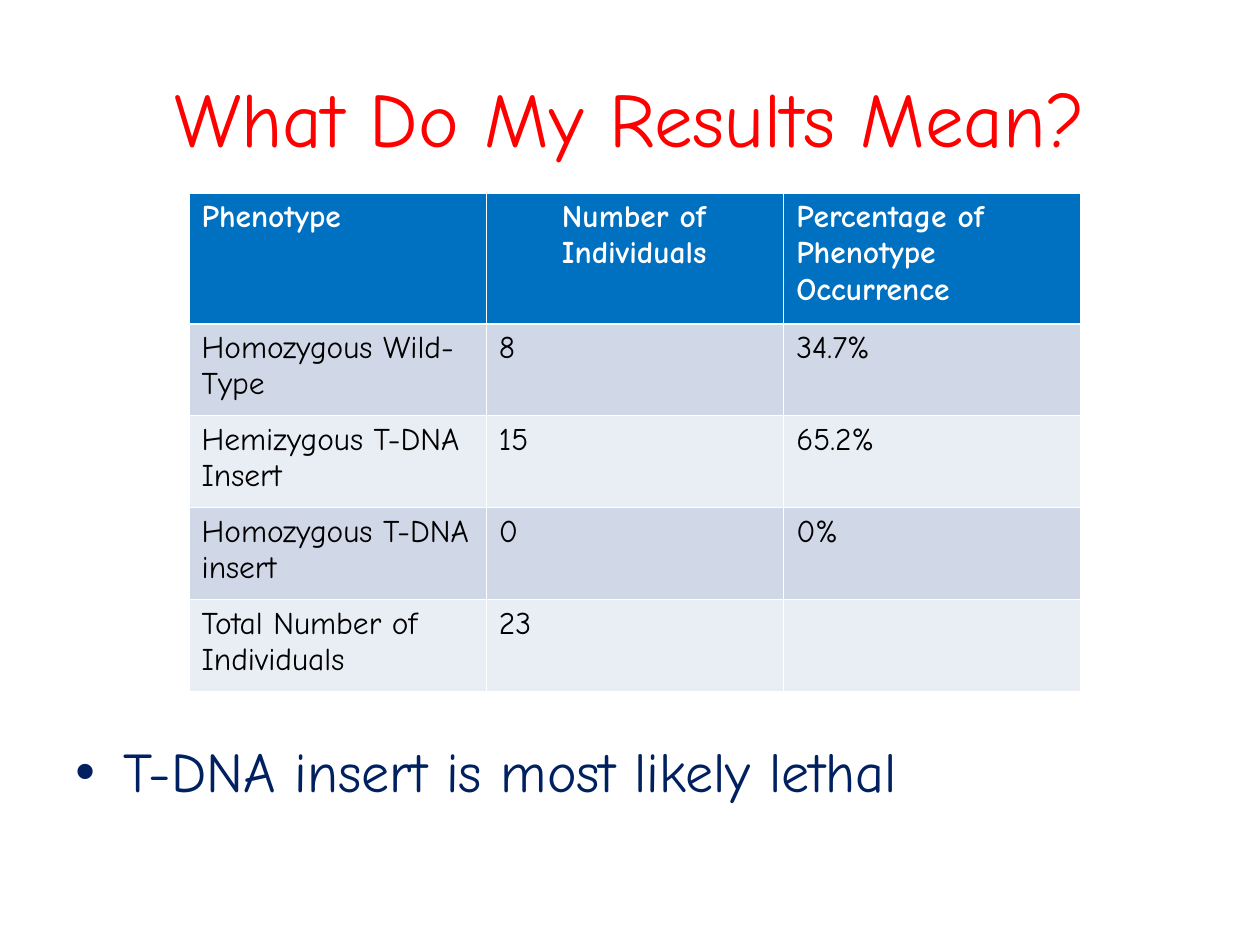
from dataclasses import dataclass

from lxml.etree import SubElement
from pptx import Presentation
from pptx.dml.color import RGBColor as RGB
from pptx.enum.text import MSO_ANCHOR as ANCHOR, PP_ALIGN as ALIGN
from pptx.oxml.ns import qn
from pptx.util import Pt

PX = 9144  # EMU per px, 100 px to the inch


@dataclass(frozen=True)
class Theme:
    font: str = "Comic Neue"
    title: RGB = RGB(0xFF, 0x00, 0x00)
    bullet: RGB = RGB(0x00, 0x20, 0x60)
    header: RGB = RGB(0x00, 0x70, 0xC0)
    header_text: RGB = RGB(0xFF, 0xFF, 0xFF)
    cell_text: RGB = RGB(0x00, 0x00, 0x00)
    bands: tuple = (RGB(0xD0, 0xD8, 0xE8), RGB(0xE9, 0xED, 0xF4))
    title_size: int = 44
    bullet_size: int = 32
    cell_size: int = 18


THEME = Theme()


def px(*lengths):
    return [n * PX for n in lengths]


def style(p, size, color, bold=False):
    for r in p.runs:
        r.font.name = THEME.font
        r.font.size = Pt(size)
        r.font.bold = bold
        r.font.color.rgb = color


prs = Presentation()
prs.slide_width, prs.slide_height = px(1000, 750)
s = prs.slides.add_slide(prs.slide_layouts[5])

# Title
title = s.shapes.title
title.left, title.top, title.width, title.height = px(50, 30, 900, 125)
tf = title.text_frame
tf.text = "What Do My Results Mean?"
tf.vertical_anchor = ANCHOR.MIDDLE
p = tf.paragraphs[0]
p.alignment = ALIGN.CENTER
style(p, THEME.title_size, THEME.title)

# Conclusion
sp = s.shapes.add_textbox(*px(50, 580, 900, 103))
tf = sp.text_frame
tf.word_wrap = True
tf.text = "T-DNA insert is most likely lethal"
p = tf.paragraphs[0]
p.space_before = Pt(6)
style(p, THEME.bullet_size, THEME.bullet)
indent = 38 * PX
pPr = p._p.get_or_add_pPr()
pPr.set("marL", str(indent))
pPr.set("indent", str(-indent))
SubElement(pPr, qn("a:buFont"), typeface="Arial")
SubElement(pPr, qn("a:buChar"), char="•")

# Results table; its default style draws the white rules
rows = [
    ("Phenotype", "Number of Individuals", "Percentage of Phenotype Occurrence"),
    ("Homozygous Wild-Type", "8", "34.7%"),
    ("Hemizygous T-DNA Insert", "15", "65.2%"),
    ("Homozygous T-DNA insert", "0", "0%"),
    ("Total Number of Individuals", "23", ""),
]
header_height, row_height = 104, 73
table_height = header_height + row_height * (len(rows) - 1)
table = s.shapes.add_table(
    len(rows), len(rows[0]), *px(150, 153, 708, table_height)
).table

for i, row in enumerate(rows):
    is_header = i == 0
    table.rows[i].height = (header_height if is_header else row_height) * PX
    fill = THEME.header if is_header else THEME.bands[(i - 1) % 2]
    color = THEME.header_text if is_header else THEME.cell_text
    for j, text in enumerate(row):
        cell = table.cell(i, j)
        cell.fill.solid()
        cell.fill.fore_color.rgb = fill
        cell.text = text
        style(cell.text_frame.paragraphs[0], THEME.cell_size, color, is_header)

# The middle heading sits one level in
p = table.cell(0, 1).text_frame.paragraphs[0]
p.level = 1
p._p.get_or_add_pPr().set("marL", str(50 * PX))

prs.save("out.pptx")
